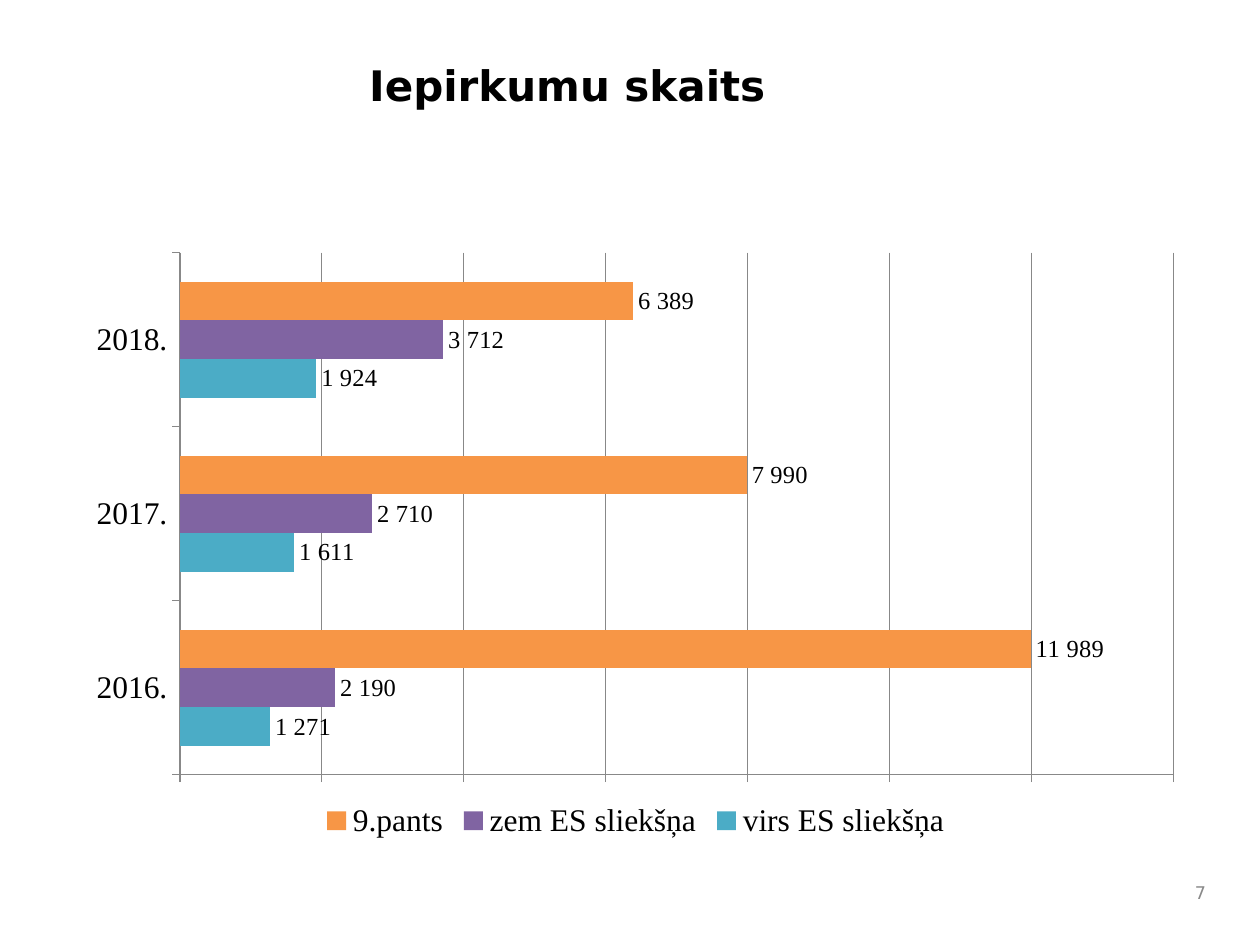
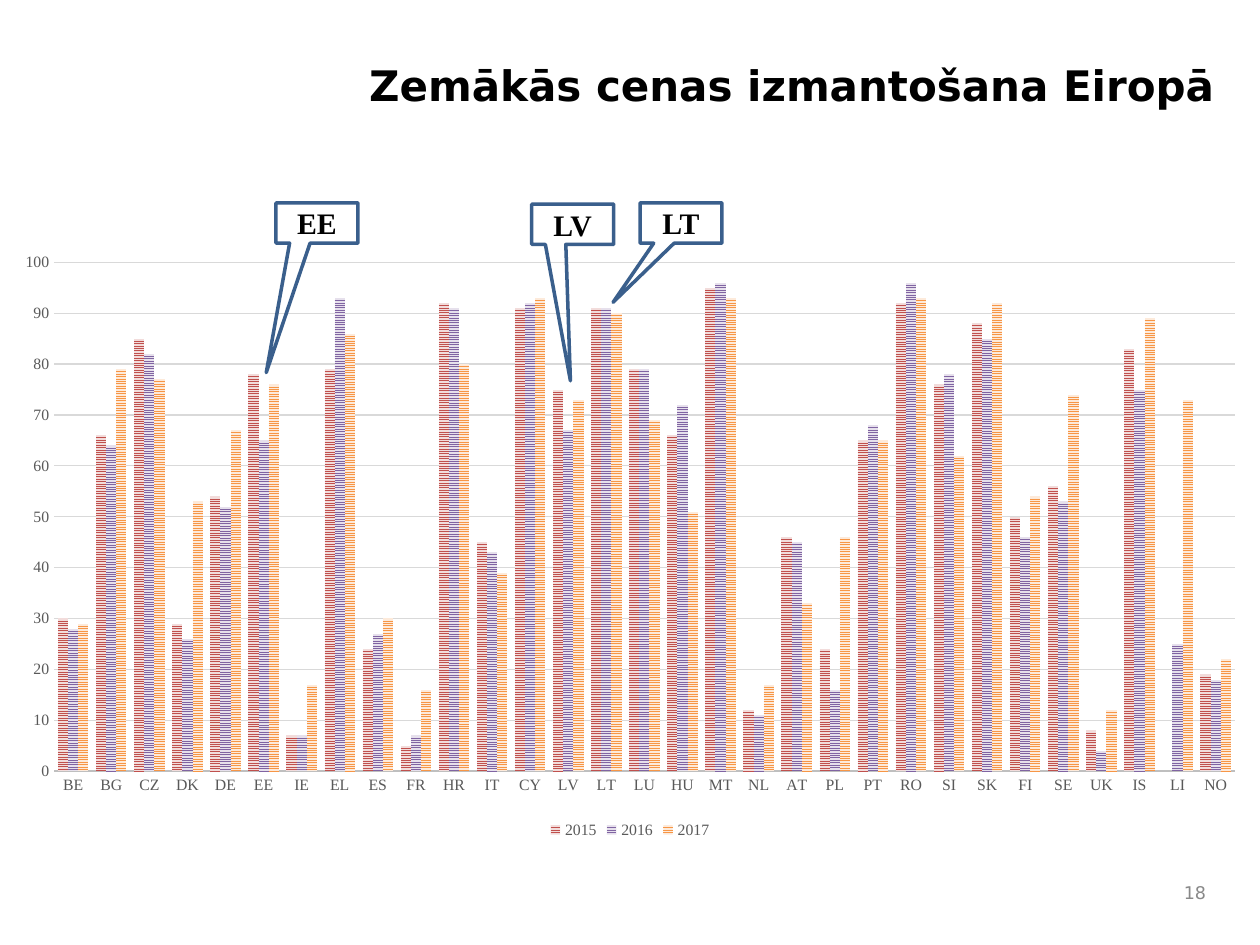
from lxml import etree
from pptx import Presentation
from pptx.chart.data import CategoryChartData
from pptx.dml.color import RGBColor
from pptx.enum.chart import XL_CHART_TYPE, XL_LABEL_POSITION, XL_LEGEND_POSITION, XL_TICK_LABEL_POSITION, XL_TICK_MARK
from pptx.enum.dml import MSO_PATTERN
from pptx.enum.shapes import MSO_SHAPE
from pptx.enum.text import MSO_ANCHOR, PP_ALIGN
from pptx.oxml.ns import qn
from pptx.util import Inches, Pt

BAR, COLUMN = XL_CHART_TYPE.BAR_CLUSTERED, XL_CHART_TYPE.COLUMN_CLUSTERED
BOTTOM, OUTSIDE_END = XL_LEGEND_POSITION.BOTTOM, XL_LABEL_POSITION.OUTSIDE_END
NO_LABELS = XL_TICK_LABEL_POSITION.NONE
TICK_NONE, TICK_OUT = XL_TICK_MARK.NONE, XL_TICK_MARK.OUTSIDE
STRIPES = MSO_PATTERN.NARROW_HORIZONTAL
CALLOUT = MSO_SHAPE.RECTANGULAR_CALLOUT
MIDDLE, TOP = MSO_ANCHOR.MIDDLE, MSO_ANCHOR.TOP
LEFT, CENTER, RIGHT = PP_ALIGN.LEFT, PP_ALIGN.CENTER, PP_ALIGN.RIGHT

HEADING_FONT, CHART_FONT = "DejaVu Sans", "Times New Roman"
COLORS = {
    "black": "000000", "number": "898989", "axis": "888888",
    "label": "595959", "base": "BFBFBF", "grid": "D9D9D9", "callout": "3A5F8C",
    "teal": "4BACC6", "purple": "8064A2", "orange": "F79646", "red": "C0504D",
    "pale red": "F2DCDB", "pale purple": "E6E0EC", "pale orange": "FDEADA",
}
THOUSANDS = "#\\ ##0"


def color(name):
    return RGBColor.from_string(COLORS[name])


def style_font(font, name, size, color_name, bold=False):
    font.name, font.size, font.bold = name, Pt(size), bold
    font.color.rgb = color(color_name)


procurements = {
    "virs ES sliekšņa": [1271, 1611, 1924],
    "zem ES sliekšņa": [2190, 2710, 3712],
    "9.pants": [11989, 7990, 6389],
}
countries = ("BE BG CZ DK DE EE IE EL ES FR HR IT CY LV LT LU HU MT NL AT PL "
             "PT RO SI SK FI SE UK IS LI NO").split()
lowest_price = {
    "2015": [30, 66, 85, 29, 54, 78, 7, 79, 24, 5, 92, 45, 91, 75, 91, 79, 66, 95,
             12, 46, 24, 65, 92, 76, 88, 50, 56, 8, 83, None, 19],
    "2016": [28, 64, 82, 26, 52, 65, 7, 93, 27, 7, 91, 43, 92, 67, 91, 79, 72, 96,
             11, 45, 16, 68, 96, 78, 85, 46, 53, 4, 75, 25, 18],
    "2017": [29, 79, 77, 53, 67, 76, 17, 86, 30, 16, 80, 39, 93, 73, 90, 69, 51, 93,
             17, 33, 46, 65, 93, 62, 92, 54, 74, 12, 89, 73, 22],
}
slides = [
    {"title": "Iepirkumu skaits", "title_width": 6.67, "number": "7",
     "kind": BAR, "left": 0.59, "width": 8.91, "plot": (0.094, 0.018, 0.885, 0.867),
     "categories": ["2016.", "2017.", "2018."], "series": procurements,
     "size": 18, "text": "black", "gap": 150, "max": 14000, "step": 2000,
     "format": THOUSANDS, "tick": TICK_OUT, "grid": "axis", "base": ("axis", 0.75)},
    {"title": "Zemākās cenas izmantošana Eiropā", "title_width": 7.05, "number": "18",
     "kind": COLUMN, "left": 0, "width": 10, "plot": (0.043, 0.034, 0.937, 0.845),
     "categories": countries, "series": lowest_price,
     "size": 9, "text": "label", "gap": 75, "max": 100, "step": 10,
     "format": "0", "tick": TICK_NONE, "grid": "grid", "base": ("base", 1.5)},
]

deck = Presentation()
deck.slide_width, deck.slide_height = Inches(10), Inches(7.5)
charts = []

for slide in slides:
    page = deck.slides.add_slide(deck.slide_layouts[5])
    title = page.shapes.title
    title.left, title.top = Inches(2.83), Inches(0.42)
    title.width, title.height = Inches(slide["title_width"]), Inches(1.13)
    number = page.shapes.add_textbox(Inches(9.21), Inches(6.92), Inches(0.46), Inches(0.33))
    for box, text, anchor, align, size, ink, bold in (
        (title, slide["title"], TOP, LEFT, 24, "black", True),
        (number, slide["number"], MIDDLE, RIGHT, 10, "number", False),
    ):
        frame = box.text_frame
        frame.text, frame.word_wrap, frame.vertical_anchor = text, True, anchor
        para = frame.paragraphs[0]
        para.alignment = align
        style_font(para.font, HEADING_FONT, size, ink, bold)

    data = CategoryChartData(number_format=slide["format"])
    data.categories = slide["categories"]
    for name, values in slide["series"].items():
        data.add_series(name, values)
    chart = page.shapes.add_chart(
        slide["kind"], Inches(slide["left"]), Inches(1.92),
        Inches(slide["width"]), Inches(4.78), data).chart
    charts.append(chart)
    style_font(chart.font, CHART_FONT, slide["size"], slide["text"])
    chart.has_title = False
    chart.has_legend = True
    chart.legend.position, chart.legend.include_in_layout = BOTTOM, False
    style_font(chart.legend.font, CHART_FONT, slide["size"], slide["text"])
    plot = chart.plots[0]
    plot.gap_width, plot.overlap, plot.vary_by_categories = slide["gap"], 0, False

    base_color, base_width = slide["base"]
    for axis in (chart.category_axis, chart.value_axis):
        axis.major_tick_mark, axis.minor_tick_mark = slide["tick"], TICK_NONE
        style_font(axis.tick_labels.font, CHART_FONT, slide["size"], slide["text"])
        axis.format.line.color.rgb = color(base_color)
        axis.format.line.width = Pt(base_width)
    scale = chart.value_axis
    scale.minimum_scale, scale.maximum_scale = 0, slide["max"]
    scale.major_unit = slide["step"]
    scale.tick_labels.number_format = slide["format"]
    scale.tick_labels.number_format_is_linked = False
    scale.has_major_gridlines = True
    scale.major_gridlines.format.line.color.rgb = color(slide["grid"])
    scale.major_gridlines.format.line.width = Pt(0.75)

    area = chart._chartSpace.chart.plotArea
    for old_layout in area.findall(qn("c:layout")):
        area.remove(old_layout)
    layout = etree.Element(qn("c:layout"))
    manual = etree.SubElement(layout, qn("c:manualLayout"))
    settings = [("layoutTarget", "inner"), ("xMode", "edge"), ("yMode", "edge")]
    for tag, value in settings + list(zip("xywh", slide["plot"])):
        etree.SubElement(manual, qn("c:" + tag)).set("val", str(value))
    area.insert(0, layout)

count_chart, price_chart = charts
count_chart.value_axis.tick_label_position = NO_LABELS
for series, fill_color in zip(count_chart.plots[0].series, ("teal", "purple", "orange")):
    series.format.fill.solid()
    series.format.fill.fore_color.rgb = color(fill_color)
    labels = series.data_labels
    labels.show_value, labels.position = True, OUTSIDE_END
    labels.number_format, labels.number_format_is_linked = THOUSANDS, False
    style_font(labels.font, CHART_FONT, 14, "black")

price_chart.value_axis.format.line.fill.background()
for series, stripe in zip(price_chart.plots[0].series, ("red", "purple", "orange")):
    fill = series.format.fill
    fill.patterned()
    fill.pattern = STRIPES
    fill.fore_color.rgb, fill.back_color.rgb = color(stripe), color("pale " + stripe)

for country, left, top, tip in (
    ("LV", 4.22, 1.62, (-0.027, 3.881)),
    ("LT", 5.08, 1.61, (-0.83, 1.965)),
    ("EE", 2.19, 1.61, (-0.619, 3.71)),
):
    callout = page.shapes.add_shape(CALLOUT, Inches(left), Inches(top), Inches(0.65), Inches(0.32))
    callout.adjustments[0], callout.adjustments[1] = tip
    callout.shadow.inherit = False
    callout.fill.background()
    callout.line.color.rgb, callout.line.width = color("callout"), Pt(2)
    frame = callout.text_frame
    frame.text, frame.vertical_anchor = country, MIDDLE
    para = frame.paragraphs[0]
    para.alignment = CENTER
    style_font(para.font, CHART_FONT, 17, "black", True)

deck.save("out.pptx")
